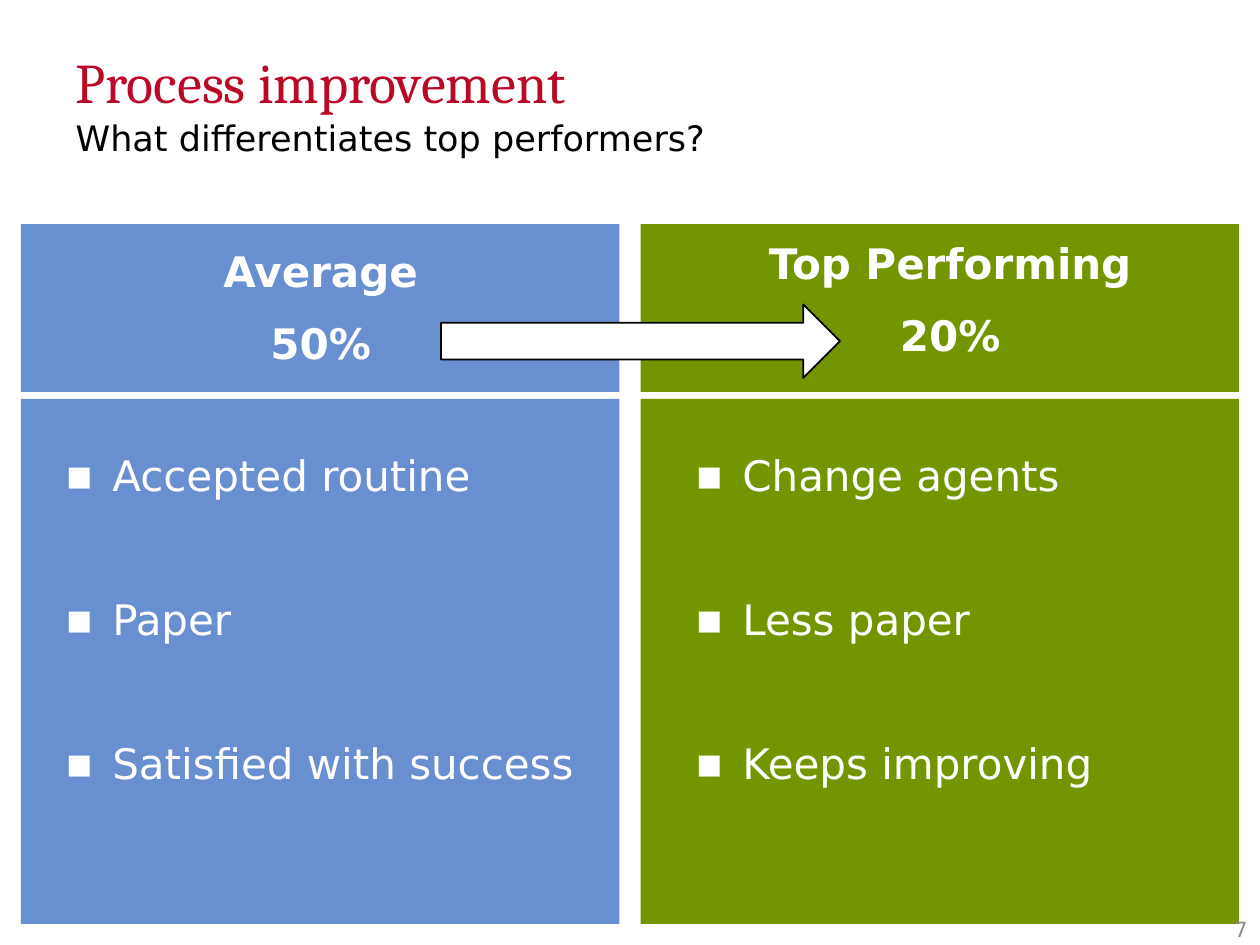
from dataclasses import dataclass

from lxml import etree
from pptx import Presentation
from pptx.dml.color import RGBColor
from pptx.enum import shapes, text
from pptx.oxml.ns import qn
from pptx.util import Pt


@dataclass(frozen=True)
class Theme:
    red: str = "BB0826"
    blue: str = "688FCF"
    green: str = "739600"
    white: str = "FFFFFF"
    black: str = "000000"
    grey: str = "8C8C8C"
    serif: str = "Cambria"
    sans: str = "DejaVu Sans"
    title: int = 32
    subtitle: int = 20
    body: int = 24
    number: int = 12


th = Theme()


def add_run(p, words, size, color, face=th.sans, bold=False):
    r = p.add_run()
    r.text = words
    r.font.name, r.font.size, r.font.bold = face, Pt(size), bold
    r.font.color.rgb = RGBColor.from_string(color)


def place(sp, box, anchor):
    sp.left, sp.top, sp.width, sp.height = [Pt(v) for v in box]
    tf = sp.text_frame
    tf.word_wrap = True
    tf.auto_size = text.MSO_AUTO_SIZE.NONE
    tf.vertical_anchor = anchor
    return tf


TOP, MIDDLE, BOTTOM = text.MSO_ANCHOR.TOP, text.MSO_ANCHOR.MIDDLE, text.MSO_ANCHOR.BOTTOM

prs = Presentation()
prs.slide_width, prs.slide_height = Pt(720), Pt(540)
s = prs.slides.add_slide(prs.slide_layouts.get_by_name("Comparison"))
ph = s.placeholders

# Title with subtitle
p = place(s.shapes.title, (36, 21.6, 648, 90), TOP).paragraphs[0]
p.alignment = text.PP_ALIGN.LEFT
p.line_spacing = 1.05
add_run(p, "Process improvement", th.title, th.red, th.serif)
p.add_line_break()
add_run(p, "What differentiates top performers?", th.subtitle, th.black)

# Columns: panel left, colour, heading box, heading lines, bullets, placeholder indexes
columns = [
    (12, th.blue, (108, 138.2, 150.5, 75.6), ["Average", "50%"],
     ["Accepted routine", "Paper", "Satisfied with success"], (1, 2)),
    (366, th.green, (384, 140.4, 318, 69.1), ["Top Performing", "20%"],
     ["Change agents", "Less paper", "Keeps improving"], (3, 4)),
]
for i, (left, color, head_box, heading, bullets, (head, body)) in enumerate(columns):
    # Panels, sent behind the text
    for top, height in ((128, 96), (228, 300)):
        sp = s.shapes.add_shape(shapes.MSO_SHAPE.RECTANGLE,
                                Pt(left), Pt(top), Pt(342), Pt(height))
        sp.shadow.inherit = False
        sp.fill.solid()
        sp.fill.fore_color.rgb = RGBColor.from_string(color)
        sp.line.fill.background()
        sp._element.getparent().insert(2, sp._element)

    # Heading
    tf = place(ph[head], head_box, BOTTOM)
    for n, words in enumerate(heading):
        p = tf.add_paragraph() if n else tf.paragraphs[0]
        p.alignment = text.PP_ALIGN.CENTER
        p.space_before, p.line_spacing = Pt(12), 1.02
        add_run(p, words, th.body, th.white, bold=True)

    # Bullet list
    tf = place(ph[body], (30 + 360 * i, 252.7, 348, 203), TOP)
    for n, words in enumerate(bullets):
        p = tf.add_paragraph() if n else tf.paragraphs[0]
        p.space_before, p.line_spacing = Pt(53), 1.02
        pPr = p._p.get_or_add_pPr()
        pPr.set("marL", str(Pt(27)))
        pPr.set("indent", str(-Pt(27)))
        etree.SubElement(pPr, qn("a:buFont"), typeface=th.sans)
        etree.SubElement(pPr, qn("a:buChar"), char="▪")
        add_run(p, words, th.body, th.white)

# Slide number
sp = s.shapes.add_textbox(0, 0, 0, 0)
p = place(sp, (552, 522, 168, 18), MIDDLE).paragraphs[0]
p.alignment = text.PP_ALIGN.RIGHT
add_run(p, "7", th.number, th.grey)

# Arrow from average to top performing
sp = s.shapes.add_shape(shapes.MSO_SHAPE.RIGHT_ARROW, Pt(252), Pt(174), Pt(228), Pt(42))
sp.shadow.inherit = False
sp.fill.solid()
sp.fill.fore_color.rgb = RGBColor.from_string(th.white)
sp.line.color.rgb = RGBColor.from_string(th.black)
sp.line.width = Pt(1)

prs.save("out.pptx")
